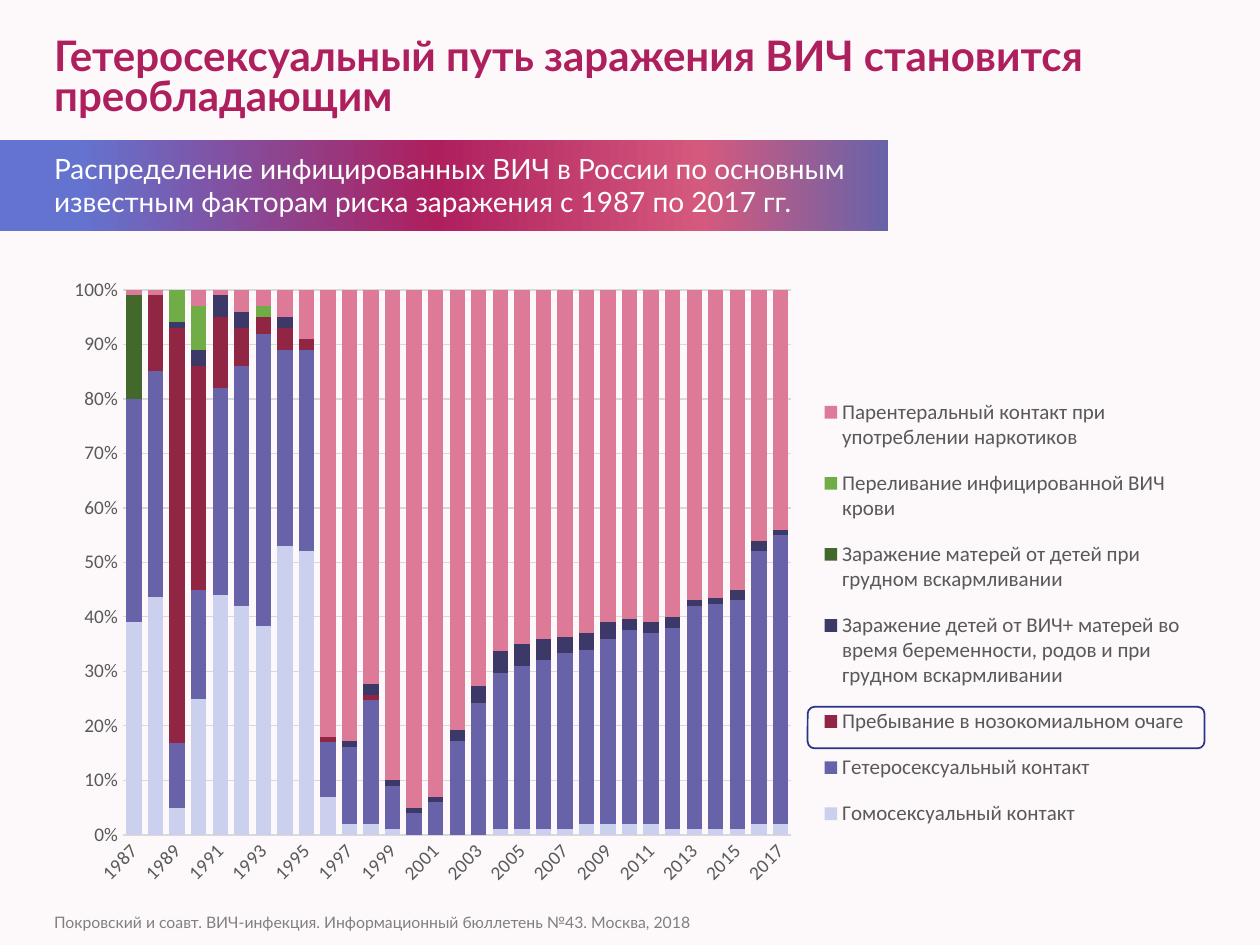
from copy import deepcopy

from pptx import Presentation
from pptx.chart.data import CategoryChartData
from pptx.dml.color import RGBColor
from pptx.enum.chart import XL_CHART_TYPE as ChartType, XL_LEGEND_POSITION as LegendSide
from pptx.enum.chart import XL_TICK_MARK as TickMark
from pptx.enum.shapes import MSO_SHAPE as Shape
from pptx.enum.text import MSO_ANCHOR as Anchor, MSO_AUTO_SIZE as AutoSize, PP_ALIGN as Align
from pptx.oxml import parse_xml
from pptx.oxml.ns import nsdecls, qn
from pptx.util import Inches, Pt

TITLE = "Гетеросексуальный путь заражения ВИЧ становится преобладающим"
SUBTITLE = ("Распределение инфицированных ВИЧ в России по основным "
            "известным факторам риска заражения с 1987 по 2017 гг.")
CITATION = "Покровский и соавт. ВИЧ-инфекция. Информационный бюллетень №43. Москва, 2018"

YEARS = range(1987, 2018)
# Name, colour, yearly shares from 1987; years past the end of a list have no value
ROUTES = [
    ("Гомосексуальный контакт", "CBD0EF",
     [39, 44, 5, 25, 44, 42, 38, 53, 52, 7, 2, 2, 1, 0, 0, 0,
      0, 1, 1, 1, 1, 2, 2, 2, 2, 1, 1, 1, 1, 2, 2]),
    ("Гетеросексуальный контакт", "6863A9",
     [41, 42, 12, 20, 38, 44, 53, 36, 37, 10, 14, 23, 8, 4, 6, 17,
      24, 29, 30, 31, 32, 32, 34, 36, 35, 37, 41, 41, 42, 50, 53]),
    ("Пребывание в нозокомиальном очаге", "912544",
     [None, 14, 77, 41, 13, 7, 3, 4, 2, 1, 0, 1]),
    ("Заражение детей от ВИЧ+ матерей во время беременности, "
     "родов и при грудном вскармливании", "3C3968",
     [None, None, 1, 3, 4, 3, None, 2, None, 0, 1, 2, 1, 1, 1, 2,
      3, 4, 4, 4, 3, 3, 3, 2, 2, 2, 1, 1, 2, 2, 1]),
    ("Заражение матерей от детей при грудном вскармливании", "43682B", [19]),
    ("Переливание инфицированной ВИЧ крови", "70AD47",
     [None, None, 6, 8, None, None, 2]),
    ("Парентеральный контакт при употреблении наркотиков", "DD7A97",
     [1, 1, None, 3, 1, 4, 3, 5, 9, 82, 82, 73, 90, 95, 93, 80,
      72, 67, 65, 64, 63, 63, 61, 61, 61, 60, 57, 56, 55, 46, 44]),
]

THEME = {
    "background": "FDF8FA", "title": "AE1F5E", "subtitle": "FFFFFF", "citation": "808080",
    "labels": "595959", "grid": "D9D9D9", "outline": "283583",
    "band": [(0.09, "6373CF"), (0.49, "AE1F5E"), (0.79, "D5597D"), (1, "6863A9")],
    "text_font": "Lato", "chart_font": "Calibri",
    "title_size": 24, "subtitle_size": 16, "citation_size": 9,
    "axis_size": 11, "legend_size": 12,
}
LEFT, WIDTH = 0.43, 9.14


def colour(name):
    return RGBColor.from_string(THEME.get(name, name))


def style_font(font, family, size, tint, bold=False):
    font.name, font.size, font.bold = family, Pt(size), bold
    font.color.rgb = colour(tint)


def write_text(box, text, role, anchor=Anchor.TOP, bold=False, spacing=1.0):
    frame = box.text_frame
    frame.text = text
    frame.word_wrap, frame.auto_size = True, AutoSize.NONE
    frame.vertical_anchor = anchor
    frame.margin_left = frame.margin_right = frame.margin_top = frame.margin_bottom = 0
    para = frame.paragraphs[0]
    para.alignment, para.line_spacing = Align.LEFT, spacing
    style_font(para.font, THEME["text_font"], THEME[role + "_size"], role, bold)


def add_box(page, *place):
    return page.shapes.add_textbox(*map(Inches, place))


def add_plain_shape(page, kind, *place):
    shape = page.shapes.add_shape(kind, *map(Inches, place))
    shape.shadow.inherit = False
    return shape


def fill_gradient(fill, stops):
    fill.gradient()
    fill.gradient_angle = 0
    stop_list = fill._xPr.find(qn("a:gradFill")).find(qn("a:gsLst"))
    while len(stop_list) < len(stops):
        stop_list.append(deepcopy(stop_list[0]))
    for stop, (position, tint) in zip(fill.gradient_stops, stops):
        stop.position, stop.color.rgb = position, colour(tint)


def set_layout(parent, index, x, y, w, h, inner=False):
    """Fix a chart part at fractions of the chart area."""
    for old in parent.findall(qn("c:layout")):
        parent.remove(old)
    target = '<c:layoutTarget val="inner"/>' if inner else ""
    modes = '<c:xMode val="edge"/><c:yMode val="edge"/>'
    sizes = "".join(f'<c:{tag} val="{value}"/>' for tag, value in zip("xywh", (x, y, w, h)))
    parent.insert(index, parse_xml(
        f'<c:layout {nsdecls("c")}><c:manualLayout>{target}{modes}{sizes}'
        f'</c:manualLayout></c:layout>'))


def format_axes(chart):
    years, shares = chart.category_axis, chart.value_axis
    for axis in (years, shares):
        axis.major_tick_mark = axis.minor_tick_mark = TickMark.NONE
        style_font(axis.tick_labels.font, THEME["chart_font"], THEME["axis_size"], "labels")
    shares.maximum_scale, shares.minimum_scale, shares.major_unit = 1, 0, 0.1
    shares.tick_labels.number_format = "0%"
    shares.tick_labels.number_format_is_linked = False
    shares.format.line.fill.background()
    shares.has_major_gridlines = True
    for line in (years.format.line, shares.major_gridlines.format.line):
        line.color.rgb, line.width = colour("grid"), Pt(0.75)
    years_xml = years._element
    years_xml.find(qn("c:txPr")).find(qn("a:bodyPr")).set("rot", "-2700000")
    years_xml.find(qn("c:noMultiLvlLbl")).addprevious(
        parse_xml(f'<c:tickLblSkip {nsdecls("c")} val="2"/>'))


def add_routes_chart(page):
    data = CategoryChartData(number_format="0")
    data.categories = [str(year) for year in YEARS]
    for name, _, shares in ROUTES:
        data.add_series(name, shares + [None] * (len(YEARS) - len(shares)))
    chart = page.shapes.add_chart(
        ChartType.COLUMN_STACKED_100, Inches(LEFT), Inches(2.1),
        Inches(WIDTH), Inches(5.03), data).chart
    chart.has_title = False
    style_font(chart.font, THEME["chart_font"], 10, "labels")
    plot = chart.plots[0]
    plot.gap_width, plot.overlap, plot.vary_by_categories = 40, 100, False
    for series, (_, tint, _) in zip(plot.series, ROUTES):
        series.format.fill.solid()
        series.format.fill.fore_color.rgb = colour(tint)
    format_axes(chart)

    chart.has_legend = True
    legend = chart.legend
    legend.position, legend.include_in_layout = LegendSide.RIGHT, False
    style_font(legend.font, THEME["chart_font"], THEME["legend_size"], "labels")
    set_layout(legend._element, 1, 0.66, 0.18, 0.33, 0.74)
    set_layout(chart._chartSpace.chart.plotArea, 0, 0.06, 0.04, 0.58, 0.86, inner=True)


def main():
    deck = Presentation()
    deck.slide_width, deck.slide_height = Inches(10), Inches(7.5)
    page = deck.slides.add_slide(deck.slide_layouts[5])
    page.background.fill.solid()
    page.background.fill.fore_color.rgb = colour("background")

    title = page.shapes.title
    title.left, title.top, title.width, title.height = map(Inches, (LEFT, 0.31, 8.62, 0.64))
    write_text(title, TITLE, "title", bold=True, spacing=0.8)
    write_text(add_box(page, LEFT, 7.16, WIDTH, 0.24), CITATION, "citation",
               anchor=Anchor.BOTTOM, spacing=0.9)

    add_routes_chart(page)

    band = add_plain_shape(page, Shape.RECTANGLE, 0, 1.11, 7.05, 0.72)
    fill_gradient(band.fill, THEME["band"])
    band.line.fill.background()
    write_text(add_box(page, LEFT, 1.2, 7.33, 0.54), SUBTITLE, "subtitle")

    highlight = add_plain_shape(page, Shape.ROUNDED_RECTANGLE, 6.41, 5.61, 3.15, 0.33)
    highlight.fill.background()
    highlight.line.color.rgb, highlight.line.width = colour("outline"), Pt(1)

    deck.save("out.pptx")


if __name__ == "__main__":
    main()
